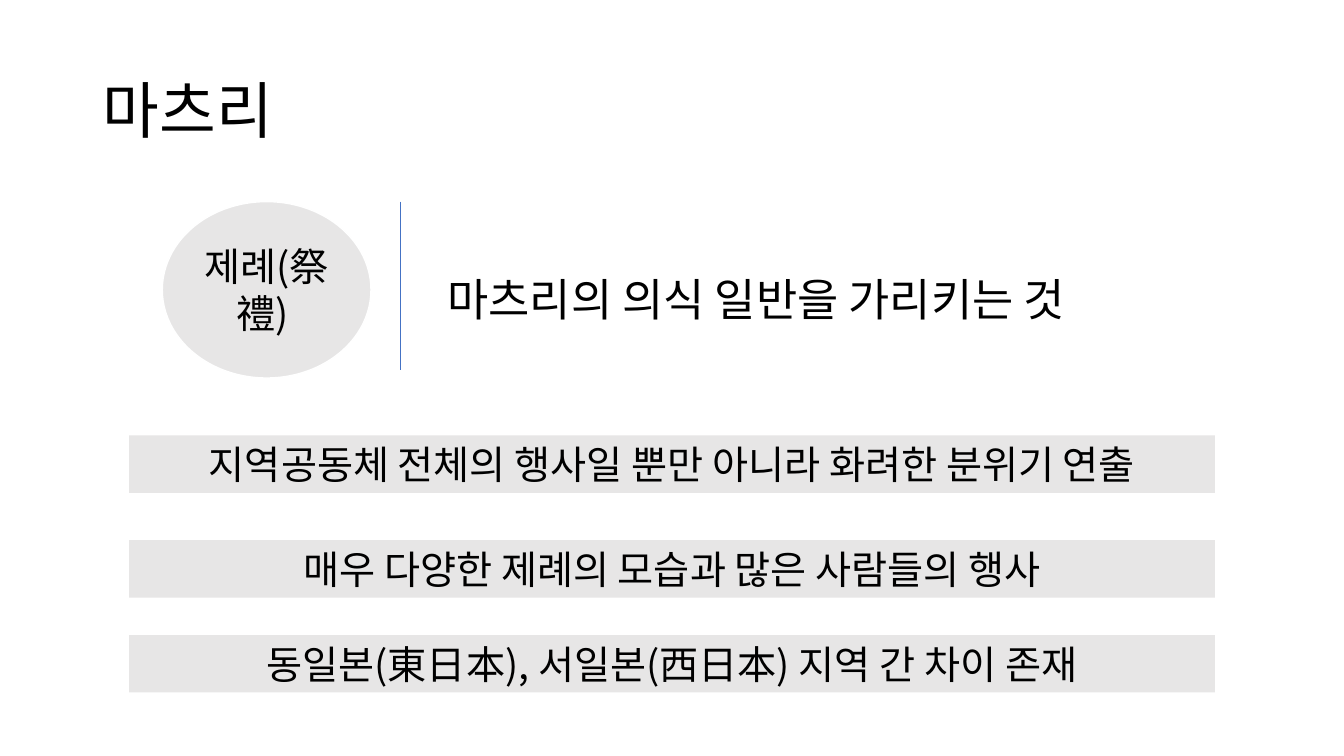
import pptx
import pptx.util
import pptx.dml.color
import pptx.enum.shapes
import pptx.enum.text
import pptx.oxml.ns
import lxml.etree

Inches = pptx.util.Inches
Pt = pptx.util.Pt
SHAPE = pptx.enum.shapes.MSO_SHAPE
ALIGN = pptx.enum.text.PP_ALIGN
ANCHOR = pptx.enum.text.MSO_ANCHOR
FONT = "Noto Sans CJK KR"
COLORS = {"text": "000000", "fill": "E7E6E6", "edge": "FFFFFF", "rule": "4472C4"}


def color(key):
    return pptx.dml.color.RGBColor.from_string(COLORS[key])


def write(frame, text, size, align=None, anchor=ANCHOR.MIDDLE):
    frame.word_wrap = True
    frame.vertical_anchor = anchor
    frame.text = text
    para = frame.paragraphs[0]
    para.alignment = align
    font = para.font
    font.size = Pt(size)
    font.color.rgb = color("text")
    font.name = FONT
    props = para._p.pPr.find(pptx.oxml.ns.qn("a:defRPr"))
    lxml.etree.SubElement(props, pptx.oxml.ns.qn("a:ea"), typeface=FONT)
    return para


def add_title(slide, text):
    title = slide.shapes.title
    title.left, title.top = Inches(0.92), Inches(0.4)
    title.width, title.height = Inches(11.5), Inches(1.45)
    write(title.text_frame, text, 44, ALIGN.LEFT).line_spacing = 0.9


def add_panel(slide, kind, box, text, edge=None):
    panel = slide.shapes.add_shape(kind, *map(Inches, box))
    panel.shadow.inherit = False
    panel.fill.solid()
    panel.fill.fore_color.rgb = color("fill")
    if edge:
        panel.line.color.rgb = color(edge)
        panel.line.width = Pt(1)
    else:
        panel.line.fill.background()
    write(panel.text_frame, text, 28, ALIGN.CENTER)


def add_note(slide, box, text):
    note = slide.shapes.add_textbox(*map(Inches, box))
    para = write(note.text_frame, text, 32, ALIGN.JUSTIFY, ANCHOR.TOP)
    para.line_spacing = 1.5
    para.space_after = Pt(8)


def add_rule(slide, left, top, end):
    rule = slide.shapes.add_connector(
        pptx.enum.shapes.MSO_CONNECTOR.STRAIGHT,
        Inches(left), Inches(top), Inches(left), Inches(end))
    rule.line.color.rgb = color("rule")
    rule.line.width = Pt(0.5)
    lxml.etree.SubElement(rule._element.spPr, pptx.oxml.ns.qn("a:effectLst"))


def main():
    deck = pptx.Presentation()
    deck.slide_width, deck.slide_height = Inches(13.33), Inches(7.5)
    slide = deck.slides.add_slide(deck.slide_layouts[5])
    add_title(slide, "마츠리")
    add_panel(slide, SHAPE.OVAL, (1.61, 2, 2.07, 1.75), "제례(祭禮) ", "edge")
    add_note(slide, (4.34, 2.38, 7.24, 0.8), "마츠리의 의식 일반을 가리키는 것")
    add_rule(slide, 3.97, 2, 3.67)
    bars = [
        (4.32, "지역공동체 전체의 행사일 뿐만 아니라 화려한 분위기 연출"),
        (5.36, "매우 다양한 제례의 모습과 많은 사람들의 행사"),
        (6.3, "동일본(東日本), 서일본(西日本) 지역 간 차이 존재"),
    ]
    for top, text in bars:
        add_panel(slide, SHAPE.RECTANGLE, (1.28, top, 10.77, 0.57), text)
    deck.save("out.pptx")


if __name__ == "__main__":
    main()
